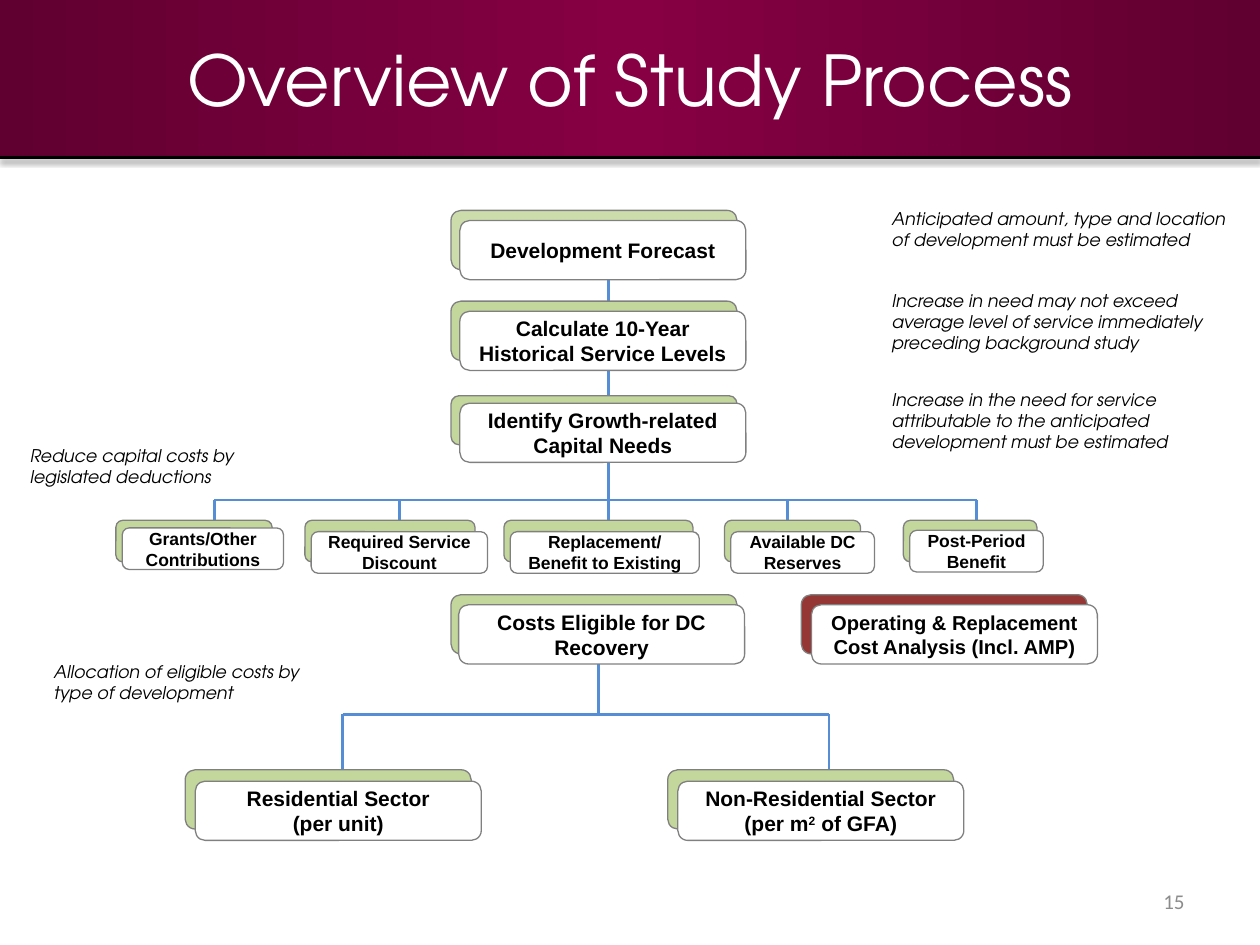
from copy import deepcopy

from lxml import etree
from pptx import Presentation
from pptx.dml.color import RGBColor
from pptx.enum.shapes import MSO_CONNECTOR, MSO_SHAPE
from pptx.enum.text import MSO_ANCHOR, PP_ALIGN
from pptx.oxml import parse_xml
from pptx.oxml.ns import nsdecls, qn
from pptx.util import Inches, Pt

HEADING_FONT, BOX_FONT, NUMBER_FONT = "TeX Gyre Adventor", "Arial", "Calibri"
GREEN, RED, BLUE, GREY = "C3D69B", "953735", "558ED5", "808080"
BLACK, WHITE = "000000", "FFFFFF"
DARK_PLUM, PLUM = "600030", "860043"


def color(hex_code):
    return RGBColor.from_string(hex_code)


class ProcessSlide:
    def __init__(self, slide):
        self.slide = slide
        self.shapes = slide.shapes

    def set_text(self, frame, text, font, size, hex_code, align=PP_ALIGN.LEFT,
                 anchor=MSO_ANCHOR.TOP, bold=False, italic=False):
        """Fill a text frame; a caret pair marks superscript."""
        frame.word_wrap = True
        frame.vertical_anchor = anchor
        for index, line in enumerate(text.split("\n")):
            paragraph = frame.paragraphs[0] if index == 0 else frame.add_paragraph()
            paragraph.alignment = align
            for part, piece in enumerate(line.split("^")):
                run = paragraph.add_run()
                run.text = piece
                run.font.name, run.font.size = font, Pt(size)
                run.font.bold, run.font.italic = bold, italic
                run.font.color.rgb = color(hex_code)
                if part % 2:
                    run.font._element.set("baseline", "30000")

    def banner(self, width, height):
        banner = self.shapes.add_shape(MSO_SHAPE.RECTANGLE, 0, 0, width, height)
        banner.shadow.inherit = False
        banner.line.fill.background()
        banner.fill.gradient()
        banner.fill.gradient_angle = 0
        stops = banner.fill.gradient_stops
        for stop, position in zip(stops, (0, 1)):
            stop.color.rgb = color(DARK_PLUM)
            stop.position = position
        first = stops[0]._gs
        first.addnext(deepcopy(first))
        middle = banner.fill.gradient_stops[1]
        middle.color.rgb = color(PLUM)
        middle.position = 0.5

    def title(self, text, width, height):
        title = self.shapes.title
        title.left, title.top, title.width, title.height = 0, 0, width, height
        self.set_text(title.text_frame, text, HEADING_FONT, 40, WHITE,
                      PP_ALIGN.CENTER, MSO_ANCHOR.MIDDLE)
        self.shapes._spTree.append(title._element)  # in front of the banner

    def line(self, x1, y1, x2, y2, hex_code=BLUE, weight=1.5):
        line = self.shapes.add_connector(
            MSO_CONNECTOR.STRAIGHT, Inches(x1), Inches(y1), Inches(x2), Inches(y2))
        line.line.color.rgb = color(hex_code)
        line.line.width = Pt(weight)
        return etree.SubElement(line._element.spPr, qn("a:effectLst"))

    def shadowed_rule(self, y, width):
        effects = self.line(0, y, width, y, BLACK, 2)
        effects.append(parse_xml(
            f'<a:outerShdw {nsdecls("a")} blurRad="{Pt(3.1)}" dist="{Pt(1.6)}" '
            'dir="5400000" rotWithShape="0"><a:srgbClr val="000000">'
            '<a:alpha val="38000"/></a:srgbClr></a:outerShdw>'))

    def branches(self, trunk_x, top, bus_y, bottom, drops):
        self.line(trunk_x, top, trunk_x, bus_y)
        self.line(drops[0], bus_y, drops[-1], bus_y)
        for x in drops:
            self.line(x, bus_y, x, bottom)

    def panel(self, left, top, width, height, fill):
        panel = self.shapes.add_shape(
            MSO_SHAPE.ROUNDED_RECTANGLE,
            Inches(left), Inches(top), Inches(width), Inches(height))
        panel.shadow.inherit = False
        panel.fill.solid()
        panel.fill.fore_color.rgb = color(fill)
        panel.line.color.rgb = color(GREY)
        panel.line.width = Pt(0.75)
        return panel

    def card(self, text, back, front, size=12, fill=GREEN, alpha=None):
        """A coloured panel with a white, labelled one in front."""
        rear = self.panel(*back, fill)
        if alpha:
            rgb = rear._element.spPr.find(qn("a:solidFill")).find(qn("a:srgbClr"))
            etree.SubElement(rgb, qn("a:alpha"), val=str(alpha * 1000))
        frame = self.panel(*front, WHITE).text_frame
        frame.margin_left = frame.margin_right = Inches(0.05)
        frame.margin_top = frame.margin_bottom = 0
        self.set_text(frame, text, BOX_FONT, size, BLACK, PP_ALIGN.CENTER,
                      MSO_ANCHOR.MIDDLE, bold=True)

    def text_box(self, left, top, width, height):
        return self.shapes.add_textbox(
            Inches(left), Inches(top), Inches(width), Inches(height)).text_frame

    def note(self, text, left, top, width, height):
        self.set_text(self.text_box(left, top, width, height), text,
                      HEADING_FONT, 10, BLACK, italic=True)

    def number(self, text, left, top, width, height):
        self.set_text(self.text_box(left, top, width, height), text, NUMBER_FONT,
                      12, "8C8C8C", PP_ALIGN.RIGHT, MSO_ANCHOR.MIDDLE)


def main():
    deck = Presentation()
    deck.slide_width, deck.slide_height = Inches(10), Inches(7.5)
    page = ProcessSlide(deck.slides.add_slide(deck.slide_layouts[5]))

    # Heading
    page.banner(deck.slide_width, Inches(1.25))
    page.title("Overview of Study Process", deck.slide_width, Inches(1.25))
    page.shadowed_rule(1.25, 10)

    # Side notes
    for text, *place in (
        ("Anticipated amount, type and location of development must be estimated",
         6.98, 1.6, 2.88, 0.44),
        ("Increase in need may not exceed average level of service immediately "
         "preceding background study", 6.98, 2.25, 2.92, 0.61),
        ("Increase in the need for service attributable to the anticipated "
         "development must be estimated", 6.98, 3.04, 2.88, 0.61),
        ("Reduce capital costs by legislated deductions", 0.14, 3.48, 2.08, 0.44),
        ("Allocation of eligible costs by type of development",
         0.33, 5.2, 2.17, 0.44),
    ):
        page.note(text, *place)

    # Lines behind the cards
    page.branches(4.83, 2.22, 3.97, 4.21, (1.7, 3.17, 4.83, 6.25, 7.75))
    page.branches(4.75, 4.99, 5.67, 6.33, (2.72, 6.58))

    # Main steps: back left and top, front left and top, back height
    step_width, step_height = 2.27, 0.47
    for text, x, y, front_x, front_y, back_height, style in (
        ("Development Forecast", 3.58, 1.67, 3.65, 1.75, 0.47, {"alpha": 83}),
        ("Calculate 10-Year Historical Service Levels",
         3.58, 2.39, 3.65, 2.47, 0.47, {}),
        ("Identify Growth-related Capital Needs",
         3.58, 3.14, 3.65, 3.2, 0.39, {}),
        ("Costs Eligible for DC Recovery", 3.58, 4.72, 3.64, 4.8, 0.47, {}),
        ("Operating & Replacement Cost Analysis (Incl. AMP)",
         6.36, 4.72, 6.44, 4.8, 0.47, {"fill": RED, "size": 11.5}),
        ("Residential Sector\n(per unit)", 1.47, 6.11, 1.55, 6.2, 0.47, {}),
        ("Non-Residential Sector (per m^2^ of GFA)",
         5.3, 6.11, 5.38, 6.2, 0.47, {}),
    ):
        page.card(text, (x, y, step_width, back_height),
                  (front_x, front_y, step_width, step_height), **style)

    # Deductions: back left and width, front top and width
    for text, x, back_width, front_y, front_width in (
        ("Grants/Other\nContributions", 0.92, 1.24, 4.19, 1.28),
        ("Required Service Discount", 2.42, 1.35, 4.22, 1.4),
        ("Replacement/\nBenefit to Existing", 4, 1.5, 4.22, 1.5),
        ("Available DC Reserves", 5.75, 1.08, 4.22, 1.14),
        ("Post-Period Benefit", 7.17, 1.06, 4.21, 1.06),
    ):
        page.card(text, (x, 4.13, back_width, 0.33),
                  (x + 0.05, front_y, front_width, 0.33), size=10)

    # Page number
    page.number("15", 7.17, 6.95, 2.33, 0.4)
    deck.save("out.pptx")


if __name__ == "__main__":
    main()
